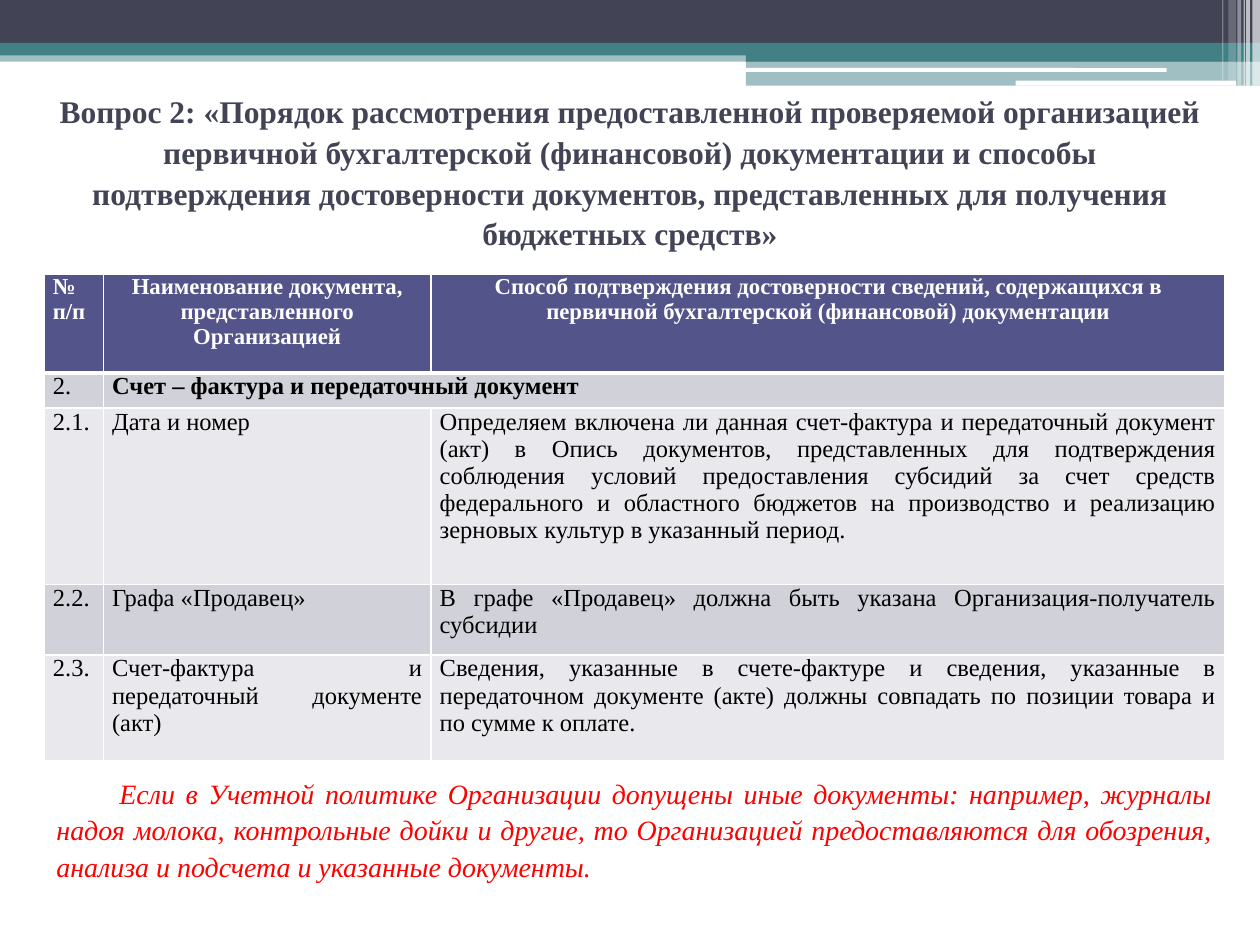
from dataclasses import dataclass

from lxml.etree import SubElement
from pptx import Presentation
from pptx.dml.color import RGBColor
from pptx.enum.shapes import MSO_SHAPE as Shape
from pptx.enum.text import MSO_ANCHOR as Anchor, PP_ALIGN as Align
from pptx.oxml.ns import qn
from pptx.util import Inches, Pt

COLORS = {
    "navy": "424456", "teal": "438086", "white": "FFFFFF", "black": "000000",
    "header": "53548A", "dark_band": "D1D1DA", "light_band": "E9E9ED", "red": "FF0000",
}
FONT = "Times New Roman"


@dataclass
class Bar:
    left: float
    top: float
    width: float
    height: float
    color: str
    opacity: int = 100
    kind: Shape = Shape.RECTANGLE


BARS = [
    Bar(0, 0.4, 10, 0.09, "teal", 50),
    Bar(0, 0, 10, 0.34, "navy"),
    Bar(0, 0.34, 10, 0.1, "teal"),
    Bar(5.92, 0.39, 4.08, 0.1, "teal"),
    Bar(5.92, 0.48, 4.08, 0.2, "teal", 50),
    Bar(5.91, 0.54, 3.35, 0.03, "white", kind=Shape.ROUNDED_RECTANGLE),
    Bar(8.06, 0.64, 1.75, 0.04, "white", kind=Shape.ROUNDED_RECTANGLE),
    Bar(9.94, 0, 0.06, 0.68, "white", 65),
    Bar(9.89, 0, 0.03, 0.68, "white", 65),
    Bar(9.87, 0, 0.01, 0.68, "white", 60),
    Bar(9.82, 0, 0.03, 0.68, "white", 40),
    Bar(9.75, 0, 0.06, 0.64, "white", 20),
    Bar(9.7, 0, 0.01, 0.64, "white", 30),
]

TITLE = (
    "Вопрос 2: «Порядок рассмотрения предоставленной проверяемой организацией "
    "первичной бухгалтерской (финансовой) документации и способы подтверждения "
    "достоверности документов, представленных для получения бюджетных средств»"
)
NOTE = (
    "Если в Учетной политике Организации допущены иные документы: например, журналы "
    "надоя молока, контрольные дойки и другие, то Организацией предоставляются для "
    "обозрения, анализа и подсчета и указанные документы."
)
COLUMN_WIDTHS = [0.47, 2.6, 6.3]
ROW_HEIGHTS = [0.78, 0.28, 1.4, 0.56, 0.84]
ROWS = [
    ["№ п/п", "Наименование документа, представленного Организацией",
     "Способ подтверждения достоверности сведений, содержащихся в первичной "
     "бухгалтерской (финансовой) документации"],
    ["2.", "Счет – фактура и передаточный документ", ""],
    ["2.1.", "Дата и номер",
     "Определяем включена ли данная счет-фактура и передаточный документ (акт) в Опись "
     "документов, представленных для подтверждения соблюдения условий предоставления "
     "субсидий за счет средств федерального и областного бюджетов на производство и "
     "реализацию зерновых культур в указанный период."],
    ["2.2.", "Графа «Продавец»",
     "В графе «Продавец» должна быть указана Организация-получатель субсидии"],
    ["2.3.", "Счет-фактура и передаточный документе (акт)",
     "Сведения, указанные в счете-фактуре и сведения, указанные в передаточном документе "
     "(акте) должны совпадать по позиции товара и по сумме к оплате."],
]


def rgb(name: str) -> RGBColor:
    return RGBColor.from_string(COLORS[name])


def write_text(frame, text: str, *, size: float, color: str, align=Align.JUSTIFY,
               bold: bool = False, italic: bool = False, spacing: float = 1.0,
               indent: float = 0) -> None:
    paragraph = frame.paragraphs[0]
    paragraph.alignment = align
    paragraph.line_spacing = spacing
    if indent:
        paragraph._p.get_or_add_pPr().set("indent", str(Inches(indent)))
    run = paragraph.add_run()
    run.text = text
    font = run.font
    font.name, font.size, font.bold, font.italic = FONT, Pt(size), bold, italic
    font.color.rgb = rgb(color)


def draw_bar(slide, bar: Bar) -> None:
    shape = slide.shapes.add_shape(bar.kind, Inches(bar.left), Inches(bar.top),
                                   Inches(bar.width), Inches(bar.height))
    shape.shadow.inherit = False
    shape.line.fill.background()
    shape.fill.solid()
    shape.fill.fore_color.rgb = rgb(bar.color)
    if bar.opacity < 100:
        color = shape.fill._xPr.find(f".//{qn('a:srgbClr')}")
        SubElement(color, qn("a:alpha")).set("val", str(bar.opacity * 1000))


def set_borders(cell, **widths: float) -> None:
    properties = cell._tc.get_or_add_tcPr()
    for index, (side, width) in enumerate(widths.items()):
        line = SubElement(properties, qn(f"a:ln{side}"), w=str(Pt(width)))
        fill = SubElement(line, qn("a:solidFill"))
        SubElement(fill, qn("a:srgbClr"), val=COLORS["white"])
        properties.insert(index, line)


def draw_table(slide) -> None:
    frame = slide.shapes.add_table(len(ROWS), len(COLUMN_WIDTHS), Inches(0.35), Inches(2.18),
                                   Inches(sum(COLUMN_WIDTHS)), Inches(sum(ROW_HEIGHTS)))
    table = frame.table
    for column, width in zip(table.columns, COLUMN_WIDTHS):
        column.width = Inches(width)
    for row, height in zip(table.rows, ROW_HEIGHTS):
        row.height = Inches(height)
    table.cell(1, 1).merge(table.cell(1, 2))
    for row_index, texts in enumerate(ROWS):
        header = row_index == 0
        band = "header" if header else "dark_band" if row_index % 2 else "light_band"
        for column_index, text in enumerate(texts):
            cell = table.cell(row_index, column_index)
            cell.margin_left = cell.margin_right = Inches(0.07)
            cell.margin_top = cell.margin_bottom = 0
            cell.fill.solid()
            cell.fill.fore_color.rgb = rgb(band)
            set_borders(cell, L=1, R=1, T=3 if row_index == 1 else 1, B=3 if header else 1)
            if text:
                write_text(cell.text_frame, text, size=13 if header else 14,
                           color="white" if header else "black",
                           bold=header or cell.is_merge_origin,
                           align=Align.CENTER if header and column_index else Align.JUSTIFY)


def draw_title(slide) -> None:
    title = slide.shapes.title
    title.left, title.top = Inches(0.35), Inches(1.07)
    title.width, title.height = Inches(9.3), Inches(0.87)
    frame = title.text_frame
    frame.vertical_anchor = Anchor.MIDDLE
    frame.margin_bottom = Inches(0.35)
    write_text(frame, TITLE, size=18, color="navy", bold=True, align=Align.CENTER, spacing=1.08)


def draw_note(slide) -> None:
    box = slide.shapes.add_textbox(Inches(0.35), Inches(6.12), Inches(9.37), Inches(0.91))
    frame = box.text_frame
    frame.word_wrap = True
    frame.vertical_anchor = Anchor.MIDDLE
    write_text(frame, NOTE, size=16, color="red", italic=True, spacing=1.08, indent=0.5)


def main() -> None:
    presentation = Presentation()
    presentation.slide_width, presentation.slide_height = Inches(10), Inches(7.5)
    slide = presentation.slides.add_slide(presentation.slide_layouts[5])
    for bar in BARS:
        draw_bar(slide, bar)
    draw_title(slide)
    draw_table(slide)
    draw_note(slide)
    presentation.save("out.pptx")


if __name__ == "__main__":
    main()
